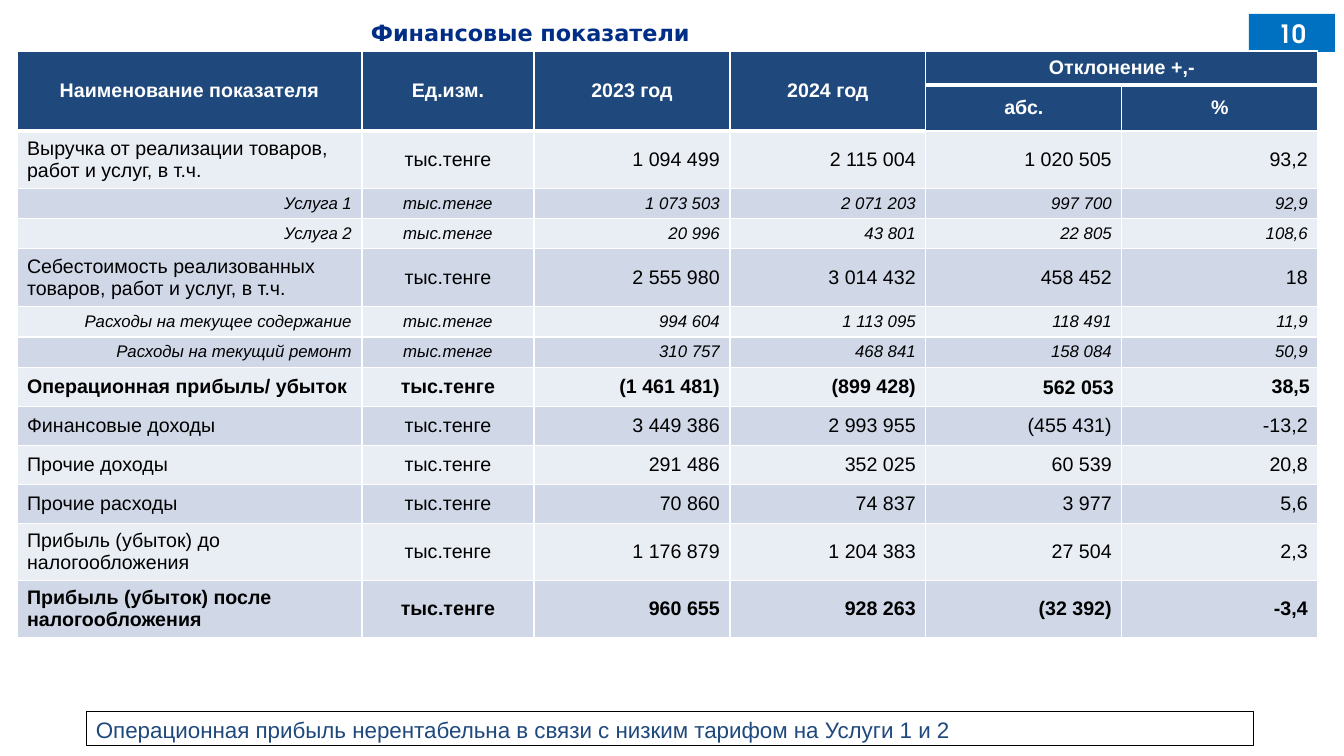
from pptx import Presentation
from pptx import util as u
from pptx.dml.color import RGBColor
from pptx.enum import shapes, text
from pptx.oxml import parse_xml
from pptx.oxml.ns import nsdecls

TITLE = "Финансовые показатели"
PAGE = "10"
NOTE = "Операционная прибыль нерентабельна в связи с низким тарифом на Услуги 1 и 2"
UNIT = "тыс.тенге"
HEADINGS = ["Наименование показателя", "Ед.изм.", "2023 год", "2024 год", "Отклонение +,-"]
DEVIATIONS = ["абс.", "%"]
# style, row height in px, name, 2023, 2024, absolute change, change in %
INDICATORS = [
    ("plain", 57, "Выручка от реализации товаров, работ и услуг, в т.ч.",
     "1 094 499", "2 115 004", "1 020 505", "93,2"),
    ("detail", 30, "Услуга 1", "1 073 503", "2 071 203", "997 700", "92,9"),
    ("detail", 30, "Услуга 2", "20 996", "43 801", "22 805", "108,6"),
    ("plain", 58, "Себестоимость реализованных товаров, работ и услуг, в т.ч.",
     "2 555 980", "3 014 432", "458 452", "18"),
    ("detail", 30, "Расходы на текущее содержание", "994 604", "1 113 095", "118 491", "11,9"),
    ("detail", 30, "Расходы на текущий ремонт", "310 757", "468 841", "158 084", "50,9"),
    ("total", 39, "Операционная прибыль/ убыток",
     "(1 461 481)", "(899 428)", "562 053", "38,5"),
    ("plain", 39, "Финансовые доходы", "3 449 386", "2 993 955", "(455 431)", "-13,2"),
    ("plain", 39, "Прочие доходы", "291 486", "352 025", "60 539", "20,8"),
    ("plain", 39, "Прочие расходы", "70 860", "74 837", "3 977", "5,6"),
    ("plain", 57, "Прибыль (убыток) до налогообложения",
     "1 176 879", "1 204 383", "27 504", "2,3"),
    ("total", 57, "Прибыль (убыток) после налогообложения",
     "960 655", "928 263", "(32 392)", "-3,4"),
]
COLUMNS = [345, 172, 196, 196, 196, 196]
HEADER_ROWS = [34, 46]
OPERATING_ROW = 8

WHITE = RGBColor(0xFF, 0xFF, 0xFF)
BLACK = RGBColor(0, 0, 0)
NAVY = RGBColor(0x1F, 0x49, 0x7D)
TITLE_BLUE = RGBColor(0x00, 0x2E, 0x86)
PAGE_BLUE = RGBColor(0x00, 0x70, 0xC0)
BANDS = [RGBColor(0xE9, 0xED, 0xF4), RGBColor(0xD0, 0xD8, 0xE8)]
STYLES = {"plain": {}, "detail": {"size": 12, "italic": True}, "total": {"bold": True}}
LEFT, CENTER, RIGHT, JUSTIFY = (text.PP_ALIGN.LEFT, text.PP_ALIGN.CENTER,
                                text.PP_ALIGN.RIGHT, text.PP_ALIGN.JUSTIFY)
MIDDLE = text.MSO_ANCHOR.MIDDLE


def px(n):
    return round(n * 914400 / 100.8)


def write(frame, words, size=14, font="Arial", color=BLACK, bold=False, italic=False,
          align=LEFT, after=0):
    frame.word_wrap = True
    line = frame.paragraphs[0]
    line.alignment = align
    line.space_after = u.Pt(after)
    run = line.add_run()
    run.text = words
    run.font.size, run.font.name = u.Pt(size), font
    run.font.bold, run.font.italic = bold, italic
    run.font.color.rgb = color


def add_box(slide, *place):
    box = slide.shapes.add_shape(shapes.MSO_SHAPE.RECTANGLE, *map(px, place))
    box.shadow.inherit = False
    return box


def paint(cell, color, bottom=1):
    """Fill a cell and give it white borders, with its own bottom width in points."""
    cell.vertical_anchor = MIDDLE
    props = cell._tc.get_or_add_tcPr()
    for side, width in (("L", 1), ("R", 1), ("T", 1), ("B", bottom)):
        props.append(parse_xml(
            f'<a:ln{side} {nsdecls("a")} w="{u.Pt(width)}"><a:solidFill>'
            f'<a:srgbClr val="{WHITE}"/></a:solidFill></a:ln{side}>'))
    cell.fill.solid()
    cell.fill.fore_color.rgb = color


def add_indicators(slide):
    heights = HEADER_ROWS + [row[1] for row in INDICATORS]
    table = slide.shapes.add_table(len(heights), len(COLUMNS), px(17), px(51),
                                   px(sum(COLUMNS)), px(sum(heights))).table
    for column, width in zip(table.columns, COLUMNS):
        column.width = px(width)
    for row, height in zip(table.rows, heights):
        row.height = px(height)

    for r in range(2):
        for c in range(len(COLUMNS)):
            paint(table.cell(r, c), NAVY, bottom=1 if r == 1 and c > 3 else 3)
    for c in range(4):
        table.cell(0, c).merge(table.cell(1, c))
    table.cell(0, 4).merge(table.cell(0, 5))
    labels = [(0, c, name) for c, name in enumerate(HEADINGS)]
    labels += [(1, c, name) for c, name in enumerate(DEVIATIONS, 4)]
    for r, c, name in labels:
        write(table.cell(r, c).text_frame, name, color=WHITE, bold=True, align=CENTER)

    for r, (style, _, name, *values) in enumerate(INDICATORS, 2):
        aligns = [RIGHT if style == "detail" else LEFT, CENTER] + [RIGHT] * 4
        for c, (words, align) in enumerate(zip([name, UNIT, *values], aligns)):
            cell = table.cell(r, c)
            paint(cell, BANDS[r % 2])
            write(cell.text_frame, words, align=align, **STYLES[style])

    absolute, percent = table.cell(OPERATING_ROW, 4), table.cell(OPERATING_ROW, 5)
    absolute.margin_left = absolute.margin_top = px(1)
    absolute.margin_bottom = 0
    absolute.margin_right = percent.margin_right = px(8)


def main():
    deck = Presentation()
    deck.slide_width, deck.slide_height = px(1344), px(756)
    slide = deck.slides.add_slide(deck.slide_layouts[6])

    title = slide.shapes.add_textbox(*map(px, (361, 14, 680, 37)))
    write(title.text_frame, TITLE, size=16, font="DejaVu Sans", color=TITLE_BLUE, bold=True)

    page = add_box(slide, 1249, 14, 86, 38)
    page.fill.solid()
    page.fill.fore_color.rgb = PAGE_BLUE
    page.line.fill.background()
    page.text_frame.vertical_anchor = MIDDLE
    write(page.text_frame, PAGE, size=18, font="TeX Gyre Adventor", color=WHITE,
          bold=True, align=CENTER)

    add_indicators(slide)

    note = add_box(slide, 86, 711, 1167, 34)
    note.fill.background()
    note.line.color.rgb = BLACK
    note.line.width = u.Pt(0.25)
    note.text_frame.vertical_anchor = text.MSO_ANCHOR.TOP
    write(note.text_frame, NOTE, size=16, color=NAVY, align=JUSTIFY, after=6)

    deck.save("out.pptx")


if __name__ == "__main__":
    main()
